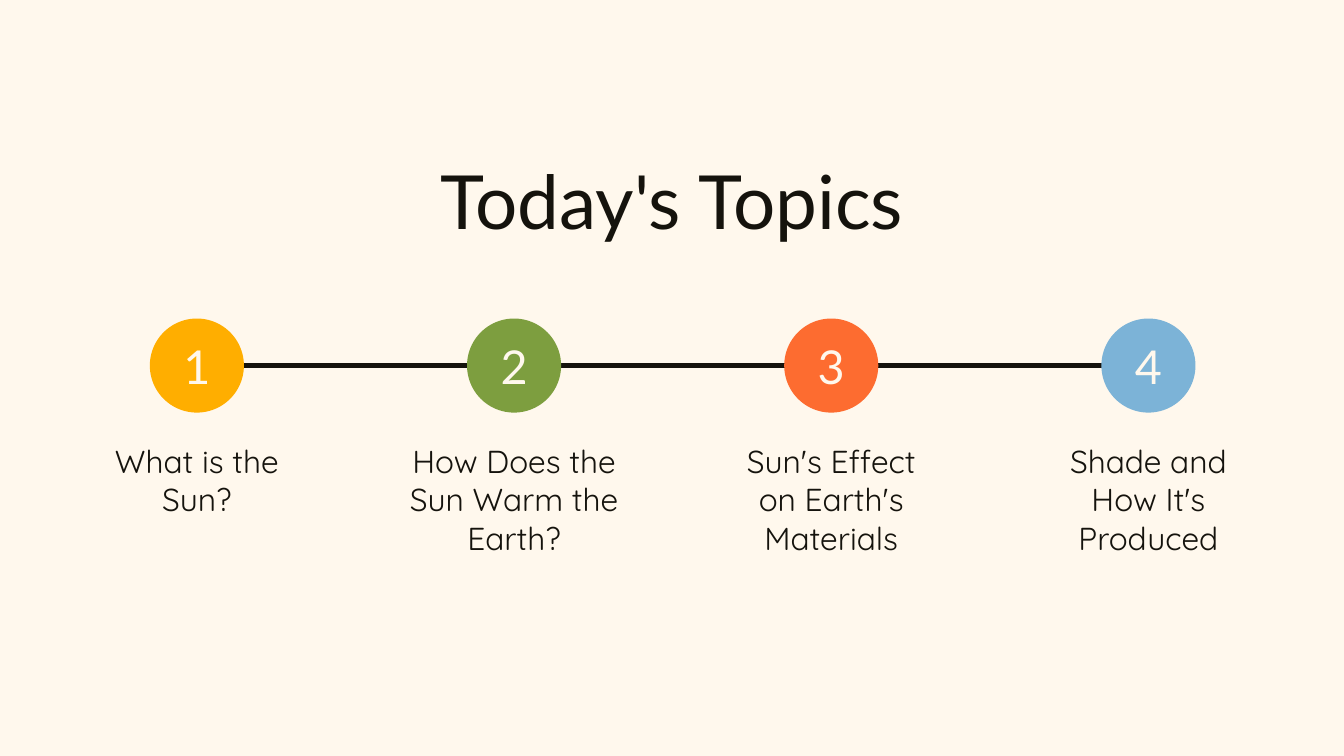
from dataclasses import dataclass

from lxml import etree
from pptx import Presentation
from pptx.dml.color import RGBColor
from pptx.enum import shapes, text
from pptx.oxml import ns
from pptx.util import Inches, Pt


@dataclass(frozen=True)
class Theme:
    """Colours, fonts and type sizes of the slide."""
    paper: str = "FFF8ED"
    ink: str = "15130D"
    dots: tuple = ("FFAE00", "7D9E3F", "FD6C30", "7CB3D7")
    head: str = "Lato"
    body: str = "Quicksand"
    title: float = 80
    number: float = 50
    label: float = 34
    rule: float = 6


THEME = Theme()
TOPICS = (
    ("What is the Sun?", 2.47),
    ("How Does the Sun Warm the Earth?", 3.36),
    ("Sun's Effect on Earth's Materials", 2.98),
    ("Shade and How It's Produced", 2.86),
)


def rgb(code):
    """Return the colour for a hex code."""
    return RGBColor.from_string(code)


def write(shape, words, font, size, color, lead, anchor=text.MSO_ANCHOR.TOP):
    """Set one centred paragraph in a shape without margins."""
    frame = shape.text_frame
    frame.text = words
    frame.word_wrap = True
    frame.auto_size = text.MSO_AUTO_SIZE.NONE
    frame.vertical_anchor = anchor
    frame.margin_left = frame.margin_right = 0
    frame.margin_top = frame.margin_bottom = 0
    para = frame.paragraphs[0]
    para.alignment = text.PP_ALIGN.CENTER
    para.line_spacing = Pt(lead)
    face = para.runs[0].font
    face.name, face.size = font, Pt(size)
    face.color.rgb = rgb(color)


def add_title(slide, left, top, width, height):
    """Place the slide title in its box."""
    title = slide.shapes.title
    title.left, title.top = Inches(left), Inches(top)
    title.width, title.height = Inches(width), Inches(height)
    write(title, "Today's Topics", THEME.head, THEME.title, THEME.ink, 96)


def add_rule(slide, left, right, y):
    """Draw the line that runs behind the dots."""
    rule = slide.shapes.add_connector(
        shapes.MSO_CONNECTOR.STRAIGHT,
        Inches(left), Inches(y), Inches(right), Inches(y))
    rule.line.color.rgb = rgb(THEME.ink)
    rule.line.width = Pt(THEME.rule)
    etree.SubElement(rule._element.spPr, ns.qn("a:effectLst"))


def add_dot(slide, left, top, size, number, color):
    """Place a numbered dot in its square box."""
    dot = slide.shapes.add_shape(
        shapes.MSO_SHAPE.OVAL,
        Inches(left), Inches(top), Inches(size), Inches(size))
    dot.shadow.inherit = False
    dot.fill.solid()
    dot.fill.fore_color.rgb = rgb(color)
    dot.line.fill.background()
    write(dot, str(number), THEME.head, THEME.number, THEME.paper, 50,
          text.MSO_ANCHOR.MIDDLE)
    dot.text_frame.margin_top = Inches(0.15)


def add_label(slide, left, top, width, height, words):
    """Place the wording of a topic in its box."""
    label = slide.shapes.add_textbox(
        Inches(left), Inches(top), Inches(width), Inches(height))
    write(label, words, THEME.body, THEME.label, THEME.ink, 40.8)


def add_topics(slide, left, top, width, height, size=1.4):
    """Spread the topics evenly across a box, dots above labels."""
    step = (width - size) / (len(TOPICS) - 1)
    drop = 1.84
    inset = 1.24
    add_rule(slide, left + inset, left + width - inset, top + size / 2)
    for index, ((words, span), color) in enumerate(zip(TOPICS, THEME.dots)):
        x = left + index * step
        add_dot(slide, x, top, size, index + 1, color)
        add_label(slide, x + (size - span) / 2, top + drop,
                  span, height - drop, words)


def main():
    """Build and save the slide."""
    deck = Presentation()
    deck.slide_width, deck.slide_height = Inches(20), Inches(11.25)
    slide = deck.slides.add_slide(deck.slide_layouts[5])
    slide.background.fill.solid()
    slide.background.fill.fore_color.rgb = rgb(THEME.paper)
    add_title(slide, 3.13, 2.31, 13.74, 1.34)
    add_topics(slide, 2.23, 4.74, 15.56, 3.53)
    deck.save("out.pptx")


if __name__ == "__main__":
    main()
